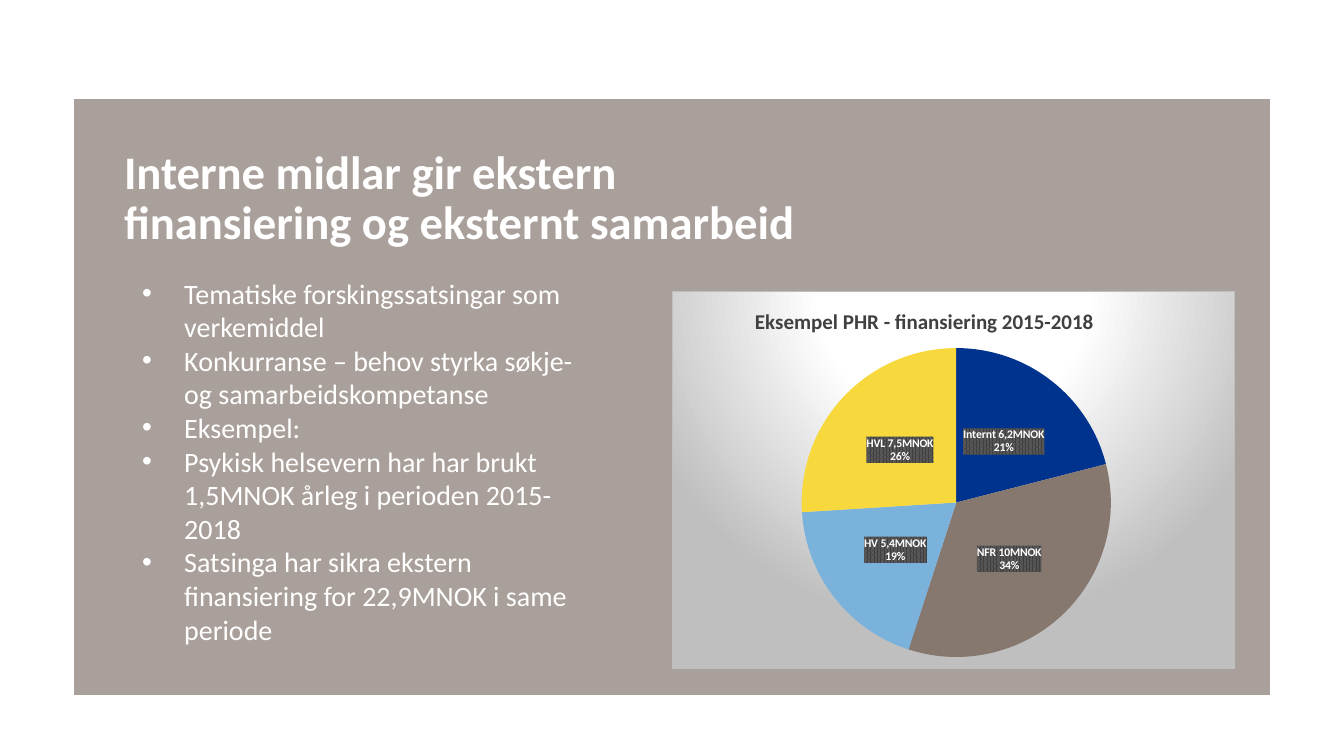
from lxml import etree
from pptx import Presentation
from pptx.chart.data import CategoryChartData
from pptx.dml.color import RGBColor
from pptx.enum.chart import XL_CHART_TYPE, XL_LABEL_POSITION
from pptx.enum.text import MSO_ANCHOR, MSO_AUTO_SIZE, PP_ALIGN
from pptx.oxml import parse_xml
from pptx.oxml.ns import nsdecls, qn
from pptx.util import Emu, Pt

PIE, CENTER = XL_CHART_TYPE.PIE, XL_LABEL_POSITION.CENTER
TOP, LEFT, FIXED = MSO_ANCHOR.TOP, PP_ALIGN.LEFT, MSO_AUTO_SIZE.NONE
FONT = "Calibri"
COLORS = {
    "white": "FFFFFF", "panel": "AAA09B", "dark": "404040", "mid": "595959",
    "grey": "BFBFBF", "black": "000000", "navy": "00338D", "brown": "86786F",
    "sky": "7AB2DC", "yellow": "F7D93E",
}
TITLE = "Interne midlar gir ekstern finansiering og eksternt samarbeid"
POINTS = [
    "Tematiske forskingssatsingar som verkemiddel",
    "Konkurranse – behov styrka søkje- og samarbeidskompetanse",
    "Eksempel:",
    "Psykisk helsevern har har brukt 1,5MNOK årleg i perioden 2015-2018",
    "Satsinga har sikra ekstern finansiering for 22,9MNOK i same periode",
]
FUNDS = [  # category, percent, colour
    ("Internt 6,2MNOK", 21, "navy"),
    ("NFR 10MNOK", 34, "brown"),
    ("HV 5,4MNOK", 19, "sky"),
    ("HVL 7,5MNOK", 26, "yellow"),
]


def px(n):
    return Emu(round(n * 914400 / 84))


def rgb(name):
    return RGBColor.from_string(COLORS[name])


def style(font, size, color, bold=False):
    font.name, font.size, font.bold = FONT, Pt(size), bold
    font.color.rgb = rgb(color)


def solid(name):
    return f'<a:srgbClr val="{COLORS[name]}"/>'


def paint(body):
    return parse_xml(f'<c:spPr {nsdecls("c", "a")}>{body}</c:spPr>')


def layout(before, inner=False, **parts):
    """Place a chart part by fractions of the chart area."""
    owner = before.getparent()
    for old in owner.findall(qn("c:layout")):
        owner.remove(old)
    body = '<c:layoutTarget val="inner"/>' if inner else ""
    body += '<c:xMode val="edge"/><c:yMode val="edge"/>'
    body += "".join(f'<c:{k} val="{v}"/>' for k, v in parts.items())
    before.addprevious(parse_xml(
        f'<c:layout {nsdecls("c")}><c:manualLayout>{body}'
        '</c:manualLayout></c:layout>'))


def add_title(slide, x, y, w, h):
    panel = slide.shapes.title
    panel.left, panel.top, panel.width, panel.height = map(px, (x, y, w, h))
    panel.fill.solid()
    panel.fill.fore_color.rgb = rgb("panel")
    frame = panel.text_frame
    frame.margin_left = frame.margin_top = px(50)
    frame.margin_right, frame.margin_bottom = px(463), px(225)
    frame.vertical_anchor, frame.auto_size = TOP, FIXED
    frame.word_wrap = True
    frame.text = TITLE
    para = frame.paragraphs[0]
    para.alignment, para.line_spacing = LEFT, 0.9
    style(para.font, 40, "white", True)


def add_list(slide, x, y, w, h):
    frame = slide.shapes.add_textbox(*map(px, (x, y, w, h))).text_frame
    frame.word_wrap = True
    frame.text = "\n".join(POINTS)
    for para in frame.paragraphs:
        props = para._p.get_or_add_pPr()
        props.set("marL", str(px(42)))
        props.set("indent", str(-px(42)))
        etree.SubElement(props, qn("a:buFont")).set("typeface", "Arial")
        etree.SubElement(props, qn("a:buChar")).set("char", "•")
        style(para.font, 24, "white")


def add_pie(slide, x, y, w, h):
    data = CategoryChartData()
    data.categories = [name for name, _, _ in FUNDS]
    data.add_series("Series 1", [share for _, share, _ in FUNDS])
    chart = slide.shapes.add_chart(PIE, *map(px, (x, y, w, h)), data).chart
    chart.has_legend = False
    style(chart.font, 10, "black")

    # Heading and pie position
    head = chart.chart_title
    head.text_frame.text = "Eksempel PHR - finansiering 2015-2018"
    style(head.text_frame.paragraphs[0].font, 18, "dark", True)
    layout(head._element.find(qn("c:overlay")), x=0.14, y=0.03)
    plot = chart.plots[0]
    plot.vary_by_categories = True
    layout(plot._element, True, x=0.23, y=0.15, w=0.55, h=0.82)

    # Slices
    series = plot.series[0]
    for i, (_, _, color) in enumerate(FUNDS):
        form = series.points[i].format
        form.fill.solid()
        form.fill.fore_color.rgb = rgb(color)
        form.line.fill.background()

    # Labels on a patterned plate
    labels = series.data_labels
    labels.show_value = False
    labels.show_percentage = labels.show_category_name = True
    labels.position = CENTER
    style(labels.font, 10, "white", True)
    node = labels._element
    node.find(qn("c:txPr")).addprevious(paint(
        f'<a:pattFill prst="pct75"><a:fgClr>{solid("dark")}</a:fgClr>'
        f'<a:bgClr>{solid("mid")}</a:bgClr></a:pattFill>'))
    node.find(qn("c:showBubbleSize")).addnext(parse_xml(
        f'<c:separator {nsdecls("c")}>\n</c:separator>'))

    # Radial backdrop
    stops = "".join(f'<a:gs pos="{pos * 1000}">{solid(color)}</a:gs>'
                    for pos, color in ((0, "white"), (39, "white"), (100, "grey")))
    chart._chartSpace.find(qn("c:txPr")).addprevious(paint(
        f'<a:gradFill><a:gsLst>{stops}</a:gsLst><a:path path="circle">'
        '<a:fillToRect l="50000" t="-80000" r="50000" b="180000"/></a:path>'
        f'</a:gradFill><a:ln w="{Pt(0.75)}"><a:solidFill>{solid("grey")}'
        '</a:solidFill></a:ln>'))


def main():
    deck = Presentation()
    deck.slide_width, deck.slide_height = px(1344), px(756)
    slide = deck.slides.add_slide(deck.slide_layouts[5])
    add_title(slide, 74, 99, 1196, 596)
    add_list(slide, 134, 272, 477, 381)
    add_pie(slide, 672, 291, 563, 378)
    deck.save("out.pptx")


if __name__ == "__main__":
    main()
